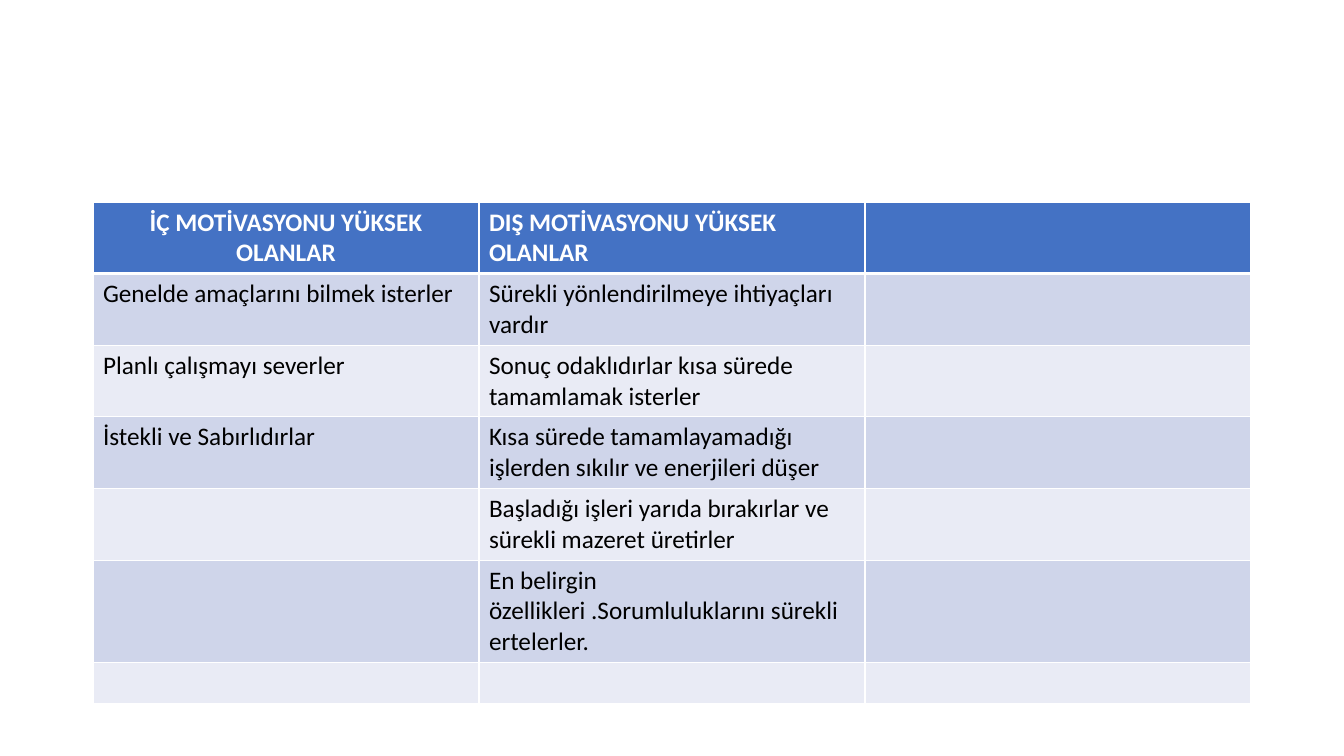
"""Build a slide with a table comparing inner and outer motivation."""
import pptx
import pptx.dml.color
import pptx.enum.text
import pptx.oxml.ns
import pptx.util
from lxml import etree

EMU_PER_PX = 914400 / 100.8
COLOURS = {
    "header": "4472C4",
    "odd_row": "CFD5EA",
    "even_row": "E9EBF5",
    "border": "FFFFFF",
    "header_text": "FFFFFF",
    "body_text": "000000",
}
ROWS = [
    ("İÇ MOTİVASYONU YÜKSEK OLANLAR", "DIŞ MOTİVASYONU YÜKSEK OLANLAR", ""),
    ("Genelde amaçlarını bilmek isterler", "Sürekli yönlendirilmeye ihtiyaçları vardır", ""),
    ("Planlı çalışmayı severler", "Sonuç odaklıdırlar kısa sürede tamamlamak isterler", ""),
    ("İstekli ve Sabırlıdırlar", "Kısa sürede tamamlayamadığı işlerden sıkılır ve enerjileri düşer", ""),
    ("", "Başladığı işleri yarıda bırakırlar ve sürekli mazeret üretirler", ""),
    ("", "En belirgin özellikleri .Sorumluluklarını sürekli ertelerler.", ""),
    ("", "", ""),
]
COLUMN_WIDTH = 386
ROW_HEIGHT = 41


def px(length):
    return pptx.util.Emu(round(length * EMU_PER_PX))


def rgb(name):
    return pptx.dml.color.RGBColor.from_string(COLOURS[name])


def write_text(paragraph, text, colour="body_text", bold=False, centred=False):
    if centred:
        paragraph.alignment = pptx.enum.text.PP_ALIGN.CENTER
    run = paragraph.add_run()
    run.text = text
    run.font.name = "Calibri"
    run.font.size = pptx.util.Pt(18)
    run.font.bold = bold
    run.font.color.rgb = rgb(colour)


def set_borders(cell, top=1, bottom=1):
    properties = cell._tc.get_or_add_tcPr()
    for side, points in (("L", 1), ("R", 1), ("T", top), ("B", bottom)):
        line = etree.SubElement(properties, pptx.oxml.ns.qn(f"a:ln{side}"), w=str(pptx.util.Pt(points)))
        fill = etree.SubElement(line, pptx.oxml.ns.qn("a:solidFill"))
        etree.SubElement(fill, pptx.oxml.ns.qn("a:srgbClr"), val=COLOURS["border"])


def fill_cell(cell, colour):
    cell.fill.solid()
    cell.fill.fore_color.rgb = rgb(colour)


def add_motivation_table(slide, left, top):
    row_count, column_count = len(ROWS), len(ROWS[0])
    frame = slide.shapes.add_table(
        row_count, column_count, px(left), px(top),
        px(COLUMN_WIDTH * column_count), px(ROW_HEIGHT * row_count))
    table = frame.table
    for column in table.columns:
        column.width = px(COLUMN_WIDTH)
    for row_index, texts in enumerate(ROWS):
        table.rows[row_index].height = px(ROW_HEIGHT)
        is_header = row_index == 0
        band = "header" if is_header else "odd_row" if row_index % 2 else "even_row"
        for column_index, text in enumerate(texts):
            cell = table.cell(row_index, column_index)
            set_borders(cell, top=3 if row_index == 1 else 1, bottom=3 if is_header else 1)
            fill_cell(cell, band)
            if text:
                write_text(
                    cell.text_frame.paragraphs[0], text,
                    colour="header_text" if is_header else "body_text",
                    bold=is_header, centred=is_header and column_index == 0)


def main():
    presentation = pptx.Presentation()
    presentation.slide_width = px(1344)
    presentation.slide_height = px(756)
    slide = presentation.slides.add_slide(presentation.slide_layouts[6])
    add_motivation_table(slide, left=93, top=202)
    presentation.save("out.pptx")


if __name__ == "__main__":
    main()
